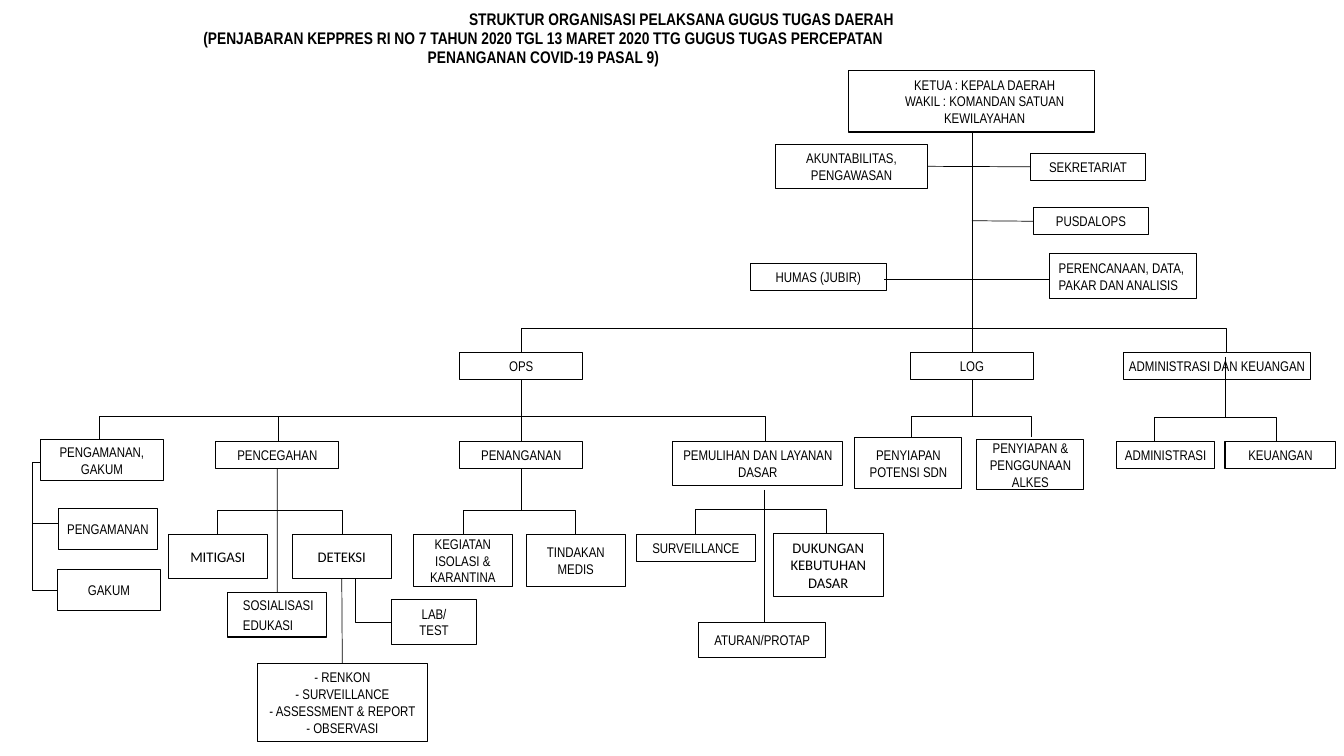
from pptx import Presentation
from pptx.dml.color import RGBColor
from pptx.enum.shapes import MSO_CONNECTOR, MSO_SHAPE
from pptx.enum.text import MSO_ANCHOR, PP_ALIGN
from pptx.oxml.ns import qn
from pptx.util import Inches, Pt
from lxml import etree

BLACK = RGBColor(0, 0, 0)
NARROW, CALIBRI = "Arial Narrow", "Calibri"
CENTER, LEFT = PP_ALIGN.CENTER, PP_ALIGN.LEFT
TOP, MIDDLE = MSO_ANCHOR.TOP, MSO_ANCHOR.MIDDLE
RECT, STRAIGHT = MSO_SHAPE.RECTANGLE, MSO_CONNECTOR.STRAIGHT


def add_run(p, text, size, font=NARROW, bold=False):
    r = p.add_run()
    r.text = text
    r.font.size = Pt(size)
    r.font.name = font
    r.font.bold = bold
    r.font.color.rgb = BLACK


def add_line(x1, y1, x2, y2):
    cx = slide.shapes.add_connector(STRAIGHT, Inches(x1), Inches(y1), Inches(x2), Inches(y2))
    cx.line.color.rgb = BLACK
    cx.line.width = Pt(0.5)
    etree.SubElement(cx._element.spPr, qn("a:effectLst"))
    return cx


prs = Presentation()
prs.slide_width, prs.slide_height = Inches(13.33), Inches(7.5)
slide = prs.slides.add_slide(prs.slide_layouts[5])

title = slide.shapes.title
title.left, title.top, title.width, title.height = Inches(1.71), Inches(0.1), Inches(10.1), Inches(0.58)
tf = title.text_frame
tf.word_wrap = True
tf.vertical_anchor = TOP
tf.margin_left = tf.margin_right = tf.margin_top = tf.margin_bottom = 0
title_lines = [
    ("STRUKTUR ORGANISASI PELAKSANA GUGUS TUGAS DAERAH", 2.74),
    ("(PENJABARAN KEPPRES RI NO 7 TAHUN 2020 TGL 13 MARET 2020 TTG GUGUS TUGAS PERCEPATAN "
     "PENANGANAN COVID-19 PASAL 9)", 0),
]
for i, (text, indent) in enumerate(title_lines):
    p = tf.paragraphs[0] if i == 0 else tf.add_paragraph()
    p.alignment = CENTER
    p.line_spacing = Pt(13.6)
    p.space_before = Pt(0)
    pPr = p._p.get_or_add_pPr()
    pPr.set("marL", str(Inches(indent)))
    pPr.set("marR", str(Inches(2.74)))
    add_run(p, text, 12, bold=True)

boxes = [
    ("ketua", 8.42, 0.7, 2.44, 0.61, "KETUA : KEPALA DAERAH\nWAKIL : KOMANDAN SATUAN KEWILAYAHAN"),
    ("akuntabilitas", 7.69, 1.43, 1.51, 0.44, "AKUNTABILITAS,\nPENGAWASAN"),
    ("sekretariat", 10.22, 1.52, 1.14, 0.27, "SEKRETARIAT"),
    ("pusdalops", 10.25, 2.06, 1.14, 0.27, "PUSDALOPS"),
    ("humas", 7.44, 2.61, 1.35, 0.27, "HUMAS (JUBIR)"),
    ("perencanaan", 10.41, 2.52, 1.46, 0.44, "PERENCANAAN, DATA, PAKAR DAN ANALISIS"),
    ("ops", 4.56, 3.5, 1.22, 0.27, "OPS"),
    ("log", 9.03, 3.5, 1.22, 0.27, "LOG"),
    ("keuangan_admin", 11.14, 3.5, 1.86, 0.27, "ADMINISTRASI DAN KEUANGAN"),
    ("pengamanan_gakum", 0.4, 4.36, 1.22, 0.41, "PENGAMANAN, GAKUM"),
    ("pencegahan", 2.14, 4.38, 1.22, 0.27, "PENCEGAHAN"),
    ("penanganan", 4.56, 4.38, 1.22, 0.27, "PENANGANAN"),
    ("pemulihan", 6.67, 4.38, 1.69, 0.44, "PEMULIHAN DAN LAYANAN DASAR"),
    ("potensi", 8.48, 4.34, 1.06, 0.51, "PENYIAPAN POTENSI SDN"),
    ("alkes", 9.69, 4.36, 1.06, 0.5, "PENYIAPAN & PENGGUNAAN ALKES"),
    ("administrasi", 11.07, 4.38, 0.98, 0.27, "ADMINISTRASI"),
    ("keuangan", 12.15, 4.38, 1.1, 0.27, "KEUANGAN"),
    ("pengamanan", 0.58, 5.04, 0.98, 0.41, "PENGAMANAN"),
    ("gakum", 0.57, 5.65, 1.02, 0.41, "GAKUM"),
    ("mitigasi", 1.67, 5.3, 0.98, 0.44, "MITIGASI"),
    ("deteksi", 2.9, 5.3, 0.98, 0.44, "DETEKSI"),
    ("sosialisasi", 2.26, 5.88, 0.98, 0.44, "SOSIALISASI\nEDUKASI"),
    ("lab", 3.88, 5.95, 0.85, 0.44, "LAB/\nTEST"),
    ("renkon", 2.55, 6.58, 1.69, 0.78, "- RENKON\n- SURVEILLANCE\n- ASSESSMENT & REPORT\n- OBSERVASI"),
    ("isolasi", 4.1, 5.3, 0.98, 0.52, "KEGIATAN ISOLASI & KARANTINA"),
    ("tindakan", 5.22, 5.3, 0.98, 0.52, "TINDAKAN MEDIS"),
    ("surveillance", 6.31, 5.3, 1.18, 0.27, "SURVEILLANCE"),
    ("dukungan", 7.67, 5.29, 1.09, 0.63, "DUKUNGAN KEBUTUHAN DASAR"),
    ("aturan", 6.93, 6.18, 1.26, 0.34, "ATURAN/PROTAP"),
]
left_insets = {"ketua": 0.28, "perencanaan": 0.09, "sosialisasi": 0.15}
left_aligned = ("perencanaan", "sosialisasi")
calibri_boxes = ("mitigasi", "deteksi", "dukungan")
box = {}
for name, x, y, w, h, text in boxes:
    sp = slide.shapes.add_shape(RECT, Inches(x), Inches(y), Inches(w), Inches(h))
    sp.shadow.inherit = False
    sp.fill.background()
    sp.line.color.rgb = BLACK
    sp.line.width = Pt(0.75)
    tf = sp.text_frame
    tf.word_wrap = True
    tf.vertical_anchor = MIDDLE
    tf.margin_left = Inches(left_insets.get(name, 0.03))
    tf.margin_right = Inches(0.03)
    tf.margin_top = tf.margin_bottom = 0
    for i, line in enumerate(text.split("\n")):
        p = tf.paragraphs[0] if i == 0 else tf.add_paragraph()
        p.alignment = LEFT if name in left_aligned else CENTER
        if name in calibri_boxes:
            add_run(p, line, 10.5, CALIBRI)
        else:
            add_run(p, line, 10)
    box[name] = sp
box["sosialisasi"].text_frame.paragraphs[1].space_before = Pt(2.2)

joins = [
    ("ketua", 2, "log", 0),
    ("sekretariat", 1, "akuntabilitas", 3),
    ("ops", 2, "penanganan", 0),
    ("pencegahan", 2, "sosialisasi", 0),
    ("deteksi", 2, "renkon", 0),
]
for start, start_side, end, end_side in joins:
    cx = add_line(0, 0, 1, 1)
    cx.begin_connect(box[start], start_side)
    cx.end_connect(box[end], end_side)

stems = [
    ("pusdalops", 1, 10.25, 2.19, 9.64, 2.19),
    ("log", 2, 9.64, 3.77, 9.64, 4.13),
    ("penanganan", 2, 5.17, 4.65, 5.17, 5.06),
    ("pengamanan", 1, 0.58, 5.25, 0.32, 5.25),
]
for name, side, x1, y1, x2, y2 in stems[:3]:
    add_line(x1, y1, x2, y2).begin_connect(box[name], side)

for x1, y1, x2, y2 in [
    (8.77, 2.77, 10.41, 2.77),
    (12.15, 3.54, 12.15, 4.14),
    (7.58, 4.86, 7.58, 6.18),
    (0.32, 5.19, 0.58, 5.19),
]:
    add_line(x1, y1, x2, y2)

branches = [(x1, x2, y, y + drop) for x1, x2, y, drop in [
    (5.17, 12.16, 3.26, 0.24),
    (2.76, 7.59, 4.13, 0.25),
    (9.04, 10.23, 4.13, 0.21),
    (11.45, 12.66, 4.14, 0.24),
    (2.16, 3.4, 5.06, 0.24),
    (4.6, 5.71, 5.06, 0.24),
    (6.9, 8.2, 5.05, 0.25),
]]
routes = [[(x1, low), (x1, y), (x2, y), (x2, low)] for x1, x2, y, low in branches]
routes += [
    [(0.99, 4.36), (0.99, 4.13), (2.76, 4.13)],
    [(0.4, 4.59), (0.32, 4.59), (0.32, 5.86), (0.57, 5.86)],
    [(3.52, 5.74), (3.52, 6.17), (3.88, 6.17)],
]
for route in routes:
    points = [(Inches(x), Inches(y)) for x, y in route]
    fb = slide.shapes.build_freeform(*points[0])
    fb.add_line_segments(points[1:], close=False)
    sp = fb.convert_to_shape()
    sp.shadow.inherit = False
    sp.fill.background()
    sp.line.color.rgb = BLACK
    sp.line.width = Pt(0.5)

prs.save("out.pptx")
